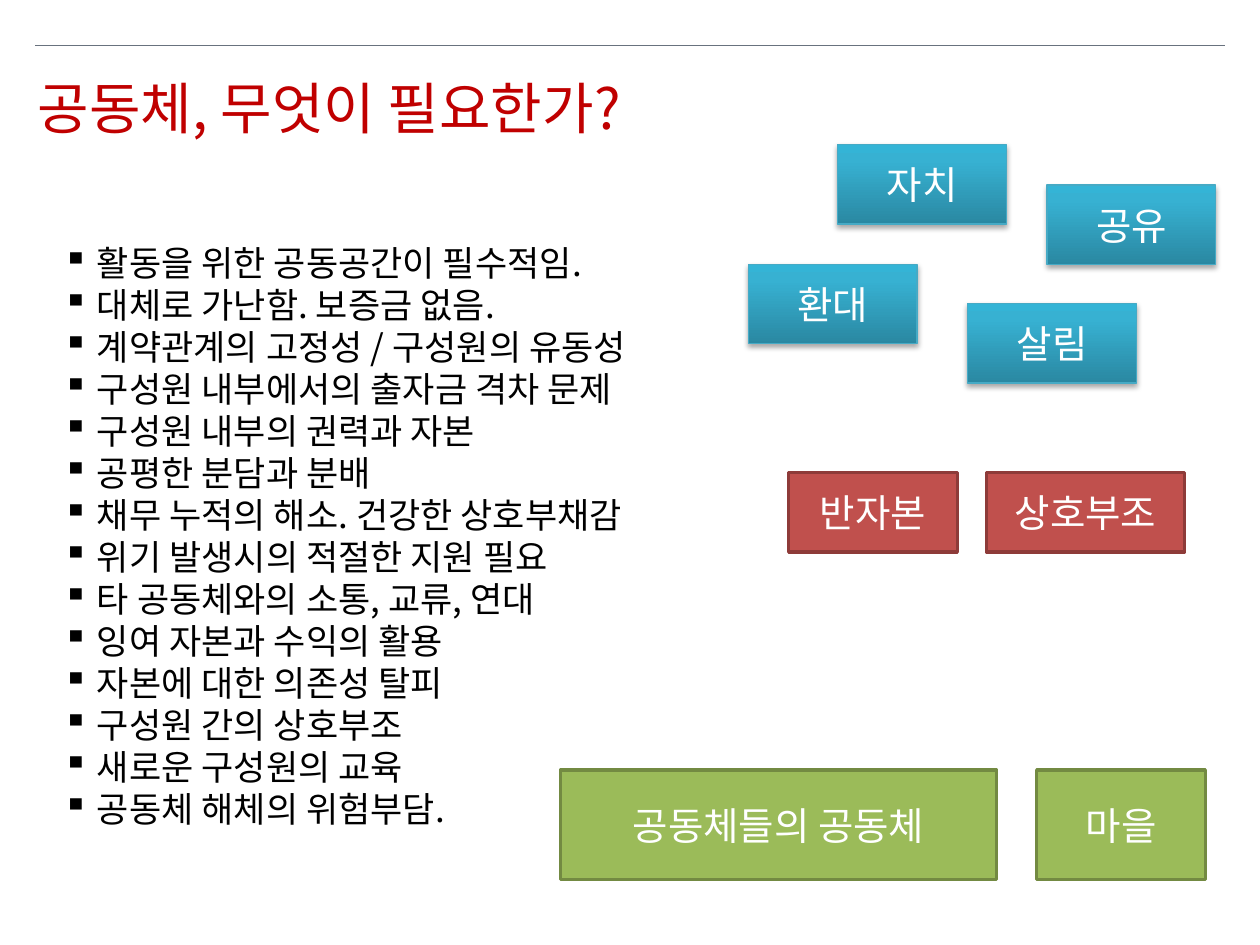
from lxml import etree
from pptx import Presentation
from pptx.dml.color import RGBColor as RGB
from pptx.enum.shapes import MSO_CONNECTOR as CONN, MSO_SHAPE as SHAPE
from pptx.enum.text import MSO_ANCHOR as ANCHOR, PP_ALIGN as ALIGN
from pptx.oxml import parse_xml
from pptx.oxml.ns import nsdecls, qn
from pptx.util import Cm, Pt

COLORS = {
    "title": "C00000", "text": "000000", "white": "FFFFFF", "rule": "68727E",
    "value_line": "46AAC5", "red": "C0504D", "red_line": "8E3B39",
    "green": "9BBB59", "green_line": "738A42", "shadow": "000000",
}
VALUE_STOPS = [(0, "2A88A2"), (80, "37B1D2"), (100, "34B4D6")]
NEEDS = [
    "활동을 위한 공동공간이 필수적임.",
    "대체로 가난함. 보증금 없음.",
    "계약관계의 고정성 / 구성원의 유동성",
    "구성원 내부에서의 출자금 격차 문제",
    "구성원 내부의 권력과 자본",
    "공평한 분담과 분배",
    "채무 누적의 해소. 건강한 상호부채감",
    "위기 발생시의 적절한 지원 필요",
    "타 공동체와의 소통, 교류, 연대",
    "잉여 자본과 수익의 활용",
    "자본에 대한 의존성 탈피",
    "구성원 간의 상호부조",
    "새로운 구성원의 교육",
    "공동체 해체의 위험부담.",
]
VALUES = [("자치", 16.89, 2.92), ("공유", 21.11, 3.73),
          ("환대", 15.09, 5.33), ("살림", 19.51, 6.12)]
BLOCKS = [
    ("반자본", (15.9, 9.53, 3.4, 1.6), "red"),
    ("마을", (20.9, 15.52, 3.4, 2.21), "green"),
    ("공동체들의 공동체", (11.3, 15.52, 8.79, 2.21), "green"),
    ("상호부조", (19.89, 9.53, 3.99, 1.6), "red"),
]


class Deck:
    """Holds the style and the current slide, and adds elements to it."""

    font = "Noto Sans CJK KR"

    def __init__(self):
        self.prs = Presentation()
        self.prs.slide_width, self.prs.slide_height = Cm(25.4), Cm(19.05)
        self.s = self.prs.slides.add_slide(self.prs.slide_layouts[6])

    def run(self, p, text, size, color):
        r = p.add_run()
        r.text = text
        for name, value in {"name": self.font, "size": Pt(size)}.items():
            setattr(r.font, name, value)
        r.font.color.rgb = RGB.from_string(COLORS[color])
        ea = etree.SubElement(r.font._element, qn("a:ea"))
        ea.set("typeface", self.font)

    def text(self, lines, box, size, color, spacing, bullet=None, **frame):
        sp = self.s.shapes.add_textbox(*map(Cm, box))
        tf = sp.text_frame
        for name, value in {"word_wrap": True, **frame}.items():
            setattr(tf, name, value)
        for i, line in enumerate(lines):
            p = tf.add_paragraph() if i else tf.paragraphs[0]
            p.line_spacing = Pt(spacing)
            if bullet:
                bu = etree.SubElement(p._p.get_or_add_pPr(), qn("a:buChar"))
                bu.set("char", bullet)
                line = " " + line
            self.run(p, line, size, color)

    def rule(self, x1, y1, x2, y2):
        c = self.s.shapes.add_connector(CONN.STRAIGHT, *map(Cm, (x1, y1, x2, y2)))
        c.line.width = Pt(0.25)
        c.line.color.rgb = RGB.from_string(COLORS["rule"])
        etree.SubElement(c._element.spPr, qn("a:effectLst"))

    def block(self, text, box, line, weight, fill=None):
        sp = self.s.shapes.add_shape(SHAPE.RECTANGLE, *map(Cm, box))
        sp.shadow.inherit = False
        if fill:
            sp.fill.solid()
            sp.fill.fore_color.rgb = RGB.from_string(COLORS[fill])
        sp.line.width = Pt(weight)
        sp.line.color.rgb = RGB.from_string(COLORS[line])
        tf = sp.text_frame
        tf.vertical_anchor = ANCHOR.MIDDLE
        p = tf.paragraphs[0]
        p.alignment = ALIGN.CENTER
        self.run(p, text, 22, "white")
        return sp

    def value(self, text, x, y):
        sp = self.block(text, (x, y, 3.4, 1.6), "value_line", 0.75)
        stops = "".join(f'<a:gs pos="{pos * 1000}"><a:srgbClr val="{color}"/></a:gs>'
                        for pos, color in VALUE_STOPS)
        spPr = sp._element.spPr
        spPr.find(qn("a:prstGeom")).addnext(parse_xml(
            f'<a:gradFill {nsdecls("a")} rotWithShape="1"><a:gsLst>{stops}</a:gsLst>'
            '<a:lin ang="16200000" scaled="0"/></a:gradFill>'))
        spPr.find(qn("a:effectLst")).append(parse_xml(
            f'<a:outerShdw {nsdecls("a")} blurRad="{Pt(3.1)}" dist="{Pt(1.8)}" '
            f'dir="5400000" rotWithShape="0"><a:srgbClr val="{COLORS["shadow"]}">'
            '<a:alpha val="35000"/></a:srgbClr></a:outerShdw>'))


def main():
    deck = Deck()
    deck.text(NEEDS, (1.27, 4.52, 22.86, 12.5), 20, "text", 24, bullet="▪",
              vertical_anchor=ANCHOR.MIDDLE, margin_left=0, margin_right=0,
              margin_top=Cm(0.05), margin_bottom=0)
    deck.rule(0.71, 0.91, 24.69, 0.91)
    deck.text(["공동체, 무엇이 필요한가?"], (0.51, 1.3, 24.21, 1.63), 32, "title", 40)
    for text, x, y in VALUES:
        deck.value(text, x, y)
    for text, box, color in BLOCKS:
        deck.block(text, box, f"{color}_line", 2, color)
    deck.prs.save("out.pptx")


if __name__ == "__main__":
    main()
